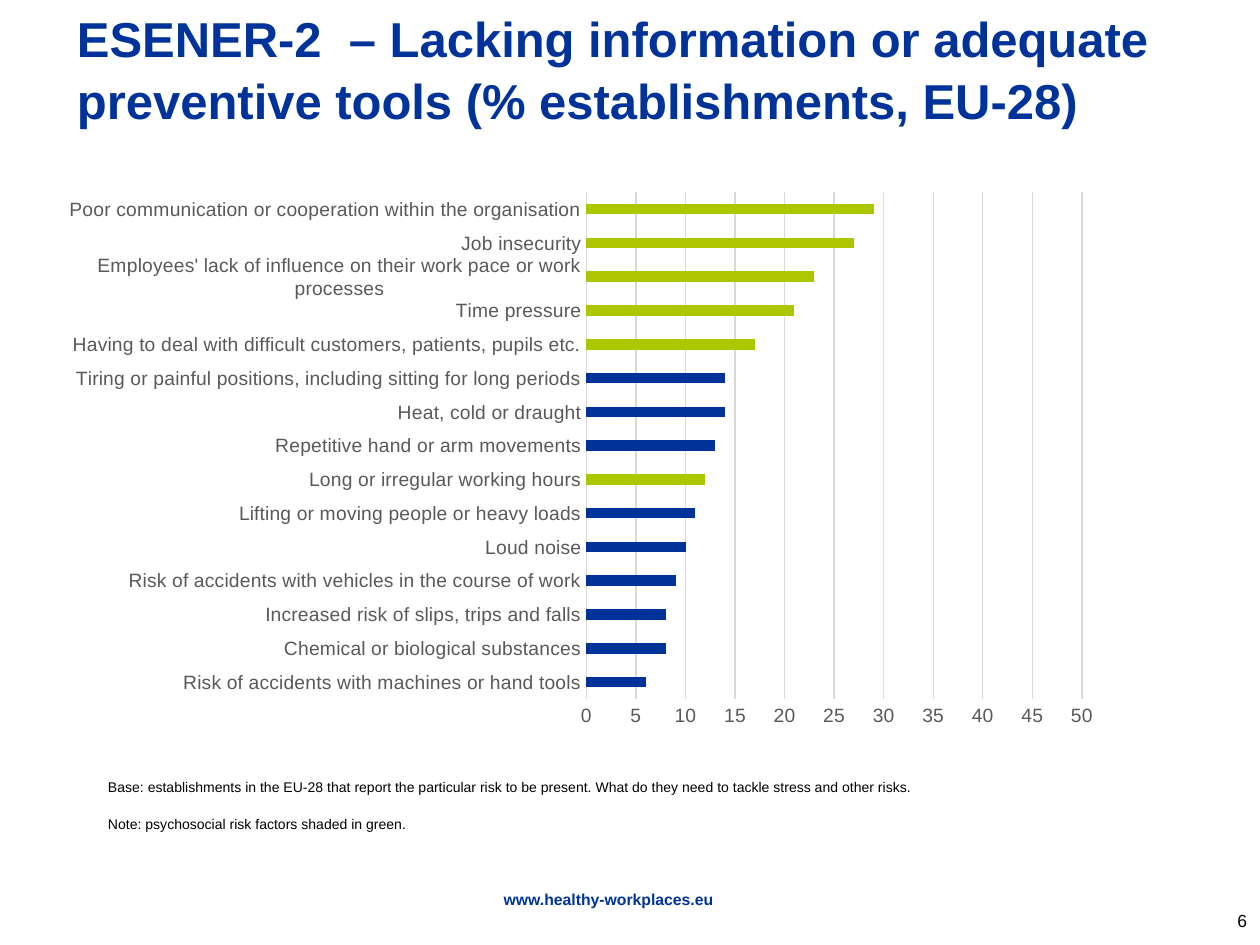
from dataclasses import dataclass

from pptx import Presentation, util as u
from pptx.chart.data import CategoryChartData
from pptx.dml.color import RGBColor
from pptx.enum import chart as charts, text
from pptx.oxml import parse_xml
from pptx.oxml.ns import nsdecls, qn

TITLE = "ESENER-2  – Lacking information or adequate preventive tools (% establishments, EU-28)"
NOTES = [
    "Base: establishments in the EU-28 that report the particular risk to be present. "
    "What do they need to tackle stress and other risks.",
    "Note: psychosocial risk factors shaded in green.",
]
FOOTER = "www.healthy-workplaces.eu"
PAGE_NUMBER = "6"
RISKS = [
    ("Risk of accidents with machines or hand tools", 6, False),
    ("Chemical or biological substances", 8, False),
    ("Increased risk of slips, trips and falls", 8, False),
    ("Risk of accidents with vehicles in the course of work", 9, False),
    ("Loud noise", 10, False),
    ("Lifting or moving people or heavy loads", 11, False),
    ("Long or irregular working hours", 12, True),
    ("Repetitive hand or arm movements", 13, False),
    ("Heat, cold or draught", 14, False),
    ("Tiring or painful positions, including sitting for long periods", 14, False),
    ("Having to deal with difficult customers, patients, pupils etc.", 17, True),
    ("Time pressure", 21, True),
    ("Employees' lack of influence on their work pace or work processes", 23, True),
    ("Job insecurity", 27, True),
    ("Poor communication or cooperation within the organisation", 29, True),
]
PLOT_LAYOUT = {"x": 0.51, "y": 0.03, "w": 0.45, "h": 0.88}


@dataclass(frozen=True)
class Theme:
    font: str = "Arial"
    blue: str = "003399"
    green: str = "ACC700"
    black: str = "000000"
    gray: str = "595959"
    grid: str = "D9D9D9"
    title: int = 28
    axis: int = 11
    page: int = 10
    footer: int = 9
    note: int = 8


THEME = Theme()


def px(value):
    return u.Emu(round(value * 914400 / 126))


def set_font(font, size, color, bold=False):
    font.name = THEME.font
    font.size = u.Pt(size)
    font.bold = bold
    font.color.rgb = RGBColor.from_string(color)


def add_text(slide, paragraphs, box, *, size, color=THEME.black, bold=False, align="LEFT",
             anchor="TOP", insets=(13, 6, 13, 6), spacing=None, gap=0):
    frame = slide.shapes.add_textbox(*map(px, box)).text_frame
    frame.word_wrap = True
    frame.vertical_anchor = text.MSO_ANCHOR[anchor]
    (frame.margin_left, frame.margin_top,
     frame.margin_right, frame.margin_bottom) = map(px, insets)
    for index, content in enumerate(paragraphs):
        paragraph = frame.add_paragraph() if index else frame.paragraphs[0]
        paragraph.alignment = text.PP_ALIGN[align]
        paragraph.line_spacing = spacing
        paragraph.space_before = u.Pt(gap if index else 0)
        paragraph.space_after = u.Pt(gap)
        run = paragraph.add_run()
        run.text = content
        set_font(run.font, size, color, bold)


def set_plot_layout(chart):
    plot_area = chart._chartSpace.chart.plotArea
    for layout in plot_area.findall(qn("c:layout")):
        plot_area.remove(layout)
    modes = "".join(f'<c:{axis}Mode val="edge"/>' for axis in "xy")
    sizes = "".join(f'<c:{name} val="{value}"/>' for name, value in PLOT_LAYOUT.items())
    plot_area.insert(0, parse_xml(
        f'<c:layout {nsdecls("c")}><c:manualLayout><c:layoutTarget val="inner"/>'
        f"{modes}{sizes}</c:manualLayout></c:layout>"))


def set_line(line):
    line.color.rgb = RGBColor.from_string(THEME.grid)
    line.width = u.Pt(0.75)


def fill_solid(target, color):
    target.format.fill.solid()
    target.format.fill.fore_color.rgb = RGBColor.from_string(color)


def add_risk_chart(slide, box):
    data = CategoryChartData(number_format="0")
    data.categories = [label for label, _, _ in RISKS]
    data.add_series("Series 1", [value for _, value, _ in RISKS])
    chart = slide.shapes.add_chart(
        charts.XL_CHART_TYPE.BAR_CLUSTERED, *map(px, box), data).chart
    chart.has_title = False
    chart.has_legend = False
    set_font(chart.font, THEME.axis, THEME.black)
    set_plot_layout(chart)

    for axis in (chart.category_axis, chart.value_axis):
        axis.major_tick_mark = charts.XL_TICK_MARK.NONE
        axis.minor_tick_mark = charts.XL_TICK_MARK.NONE
        set_font(axis.tick_labels.font, THEME.axis, THEME.gray)
    set_line(chart.category_axis.format.line)

    values = chart.value_axis
    values.minimum_scale = 0
    values.maximum_scale = 50
    values.major_unit = 5
    values.tick_labels.number_format = "0"
    values.tick_labels.number_format_is_linked = False
    values.format.line.fill.background()
    values.has_major_gridlines = True
    set_line(values.major_gridlines.format.line)

    plot = chart.plots[0]
    plot.gap_width = 219
    plot.vary_by_categories = False
    series = plot.series[0]
    series.invert_if_negative = False
    fill_solid(series, THEME.blue)
    for index, (_, _, psychosocial) in enumerate(RISKS):
        if psychosocial:
            fill_solid(series.points[index], THEME.green)


def main():
    presentation = Presentation()
    presentation.slide_width = px(1260)
    presentation.slide_height = px(945)
    slide = presentation.slides.add_slide(presentation.slide_layouts[6])
    add_text(slide, [PAGE_NUMBER], (1176, 896, 84, 50), size=THEME.page,
             align="RIGHT", anchor="MIDDLE")
    add_text(slide, [FOOTER], (192, 892, 833, 14), size=THEME.footer, color=THEME.blue,
             bold=True, align="CENTER", insets=(0, 0, 0, 0), spacing=0.9)
    add_text(slide, [TITLE], (64, 63, 1242, 68), size=THEME.title, color=THEME.blue,
             bold=True, anchor="BOTTOM", insets=(13, 6, 13, 2), spacing=1.05)
    add_text(slide, NOTES, (95, 772, 963, 68), size=THEME.note, align="JUSTIFY", gap=6)
    add_risk_chart(slide, (25, 175, 1101, 576))
    presentation.save("out.pptx")


if __name__ == "__main__":
    main()
